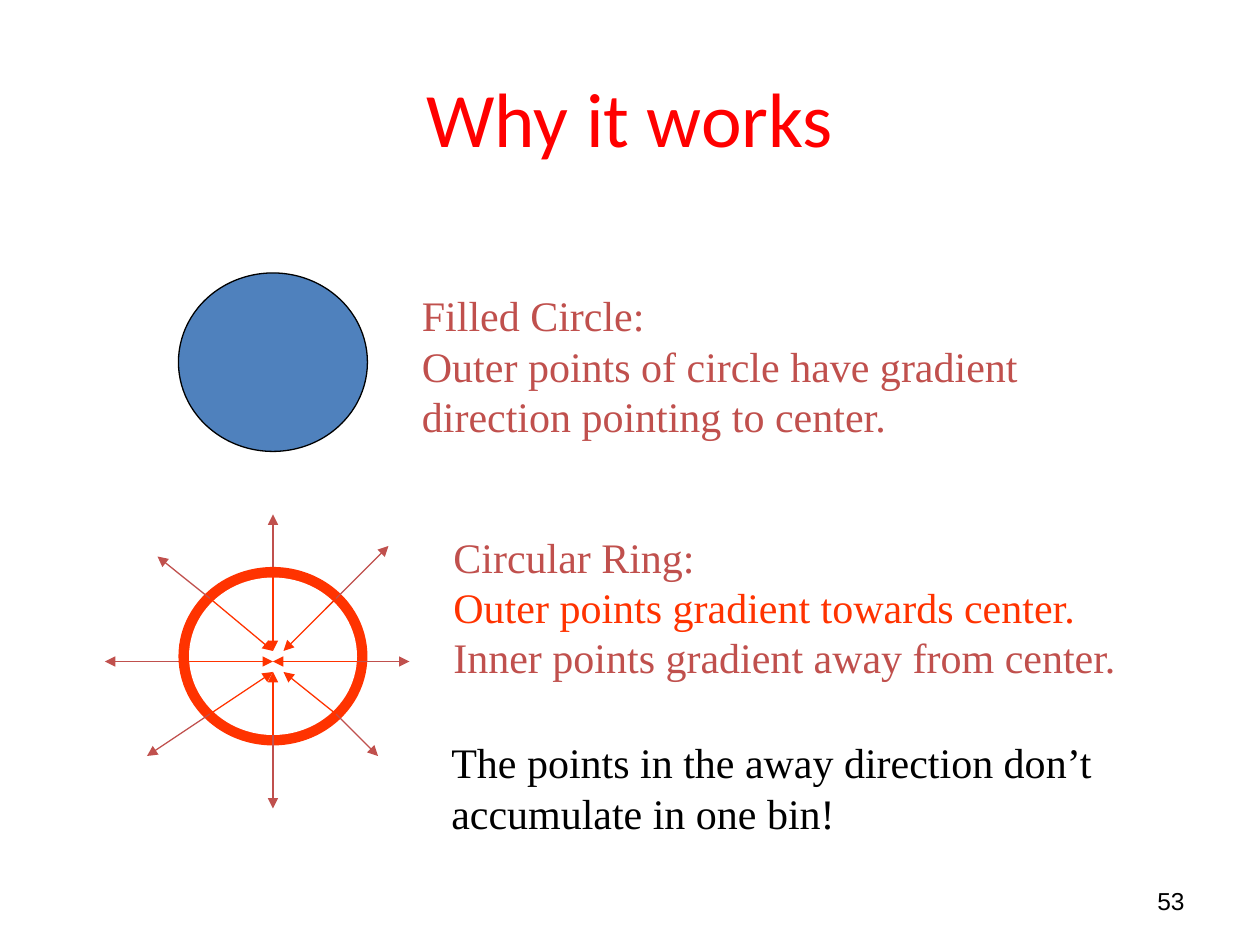
from lxml.etree import SubElement
from pptx import Presentation
from pptx.dml.color import RGBColor
from pptx.enum.shapes import MSO_CONNECTOR, MSO_SHAPE
from pptx.enum.text import MSO_ANCHOR, PP_ALIGN
from pptx.oxml.ns import qn
from pptx.util import Inches, Pt

# The slide is a grid of 120 columns by 90 rows, 12 cells to the inch.
CELL = Inches(1) / 12
RED, ORANGE, BRICK, BLUE = "FF0000", "FF3300", "C0504D", "4F81BD"
BLACK, WHITE = "000000", "FFFFFF"

# Arrows (x1, y1, x2, y2) in cells from the centre of the ring
AWAY = [(0, -8, 0, -14), (0, 7, 0, 14), (-9, 0, -16, 0), (8, 0, 13, 0),
        (6, 5, 10, 9), (-6, 5, -12, 9), (-6, -6, -11, -10), (5, -5, 11, -11)]
TOWARDS = [(0, -9, 0, -1), (0, 7, 0, 1), (-9, 0, 0, 0), (8, 0, 0, 0),
           (-6, 5, 0, 1), (6, -6, 1, -1), (6, 5, 1, 1), (-6, -6, 0, -1)]


def cells(*values):
    return [round(v * CELL) for v in values]


def rgb(color):
    return RGBColor.from_string(color)


def add_text(s, box, lines, size=24, font="Times New Roman", color=BRICK,
             align=PP_ALIGN.LEFT, anchor=MSO_ANCHOR.TOP, wrap=True):
    """Each line is a string, or a (string, color) pair."""
    tf = s.shapes.add_textbox(*cells(*box)).text_frame
    tf.word_wrap = wrap
    tf.vertical_anchor = anchor
    for i, line in enumerate(lines):
        text, line_color = (line, color) if isinstance(line, str) else line
        p = tf.paragraphs[0] if i == 0 else tf.add_paragraph()
        p.alignment = align
        r = p.add_run()
        r.text = text
        r.font.size = Pt(size)
        r.font.name = font
        r.font.color.rgb = rgb(line_color)


def add_ellipse(s, box, fill, line=None):
    sp = s.shapes.add_shape(MSO_SHAPE.OVAL, *cells(*box))
    sp.shadow.inherit = False
    sp.fill.solid()
    sp.fill.fore_color.rgb = rgb(fill)
    if line:
        sp.line.color.rgb = rgb(line)
        sp.line.width = Pt(0.75)
    else:
        sp.line.fill.background()


def add_arrow(s, ends, color):
    c = s.shapes.add_connector(MSO_CONNECTOR.STRAIGHT, *cells(*ends))
    c.line.color.rgb = rgb(color)
    c.line.width = Pt(0.75)
    SubElement(c.line._get_or_add_ln(), qn("a:tailEnd"), type="triangle")
    SubElement(c._element.spPr, qn("a:effectLst"))


def add_filled_circle(s, x, y, w, h):
    add_ellipse(s, (x, y, w, h), BLUE, BLACK)
    add_text(s, (x + 22, y + 1, 59.2, 15.6),
             ["Filled Circle:", "Outer points of circle have gradient",
              "direction pointing to center."])


def add_ring(s, x, y, w, h):
    add_ellipse(s, (x, y, w, h), ORANGE)
    add_ellipse(s, (x + 1, y + 1, w - 2, h - 2), WHITE)
    add_text(s, (x + 25, y - 4, 65.6, 15.6),
             ["Circular Ring:",
              ("Outer points gradient towards center.", ORANGE),
              "Inner points gradient away from center."], wrap=False)
    cx, cy = x + w / 2, y + 9
    for arrows, color in ((AWAY, BRICK), (TOWARDS, ORANGE)):
        for x1, y1, x2, y2 in arrows:
            add_arrow(s, (cx + x1, cy + y1, cx + x2, cy + y2), color)


def main():
    prs = Presentation()
    prs.slide_width, prs.slide_height = Inches(10), Inches(7.5)
    s = prs.slides.add_slide(prs.slide_layouts[6])
    add_text(s, (6, 3.6, 108, 15), ["Why it works"], size=44, font="Calibri",
             color=RED, align=PP_ALIGN.CENTER, anchor=MSO_ANCHOR.MIDDLE)
    add_filled_circle(s, 17, 26, 18, 17)
    add_ring(s, 17, 54, 18, 17)
    add_text(s, (41.8, 69.6, 63.5, 10.8),
             ["The points in the away direction don’t",
              "accumulate in one bin!"], color=BLACK, wrap=False)
    add_text(s, (86, 83.4, 28, 4.8), ["53"], size=14, font="Arial",
             color=BLACK, align=PP_ALIGN.RIGHT, anchor=MSO_ANCHOR.MIDDLE)
    prs.save("out.pptx")


if __name__ == "__main__":
    main()
